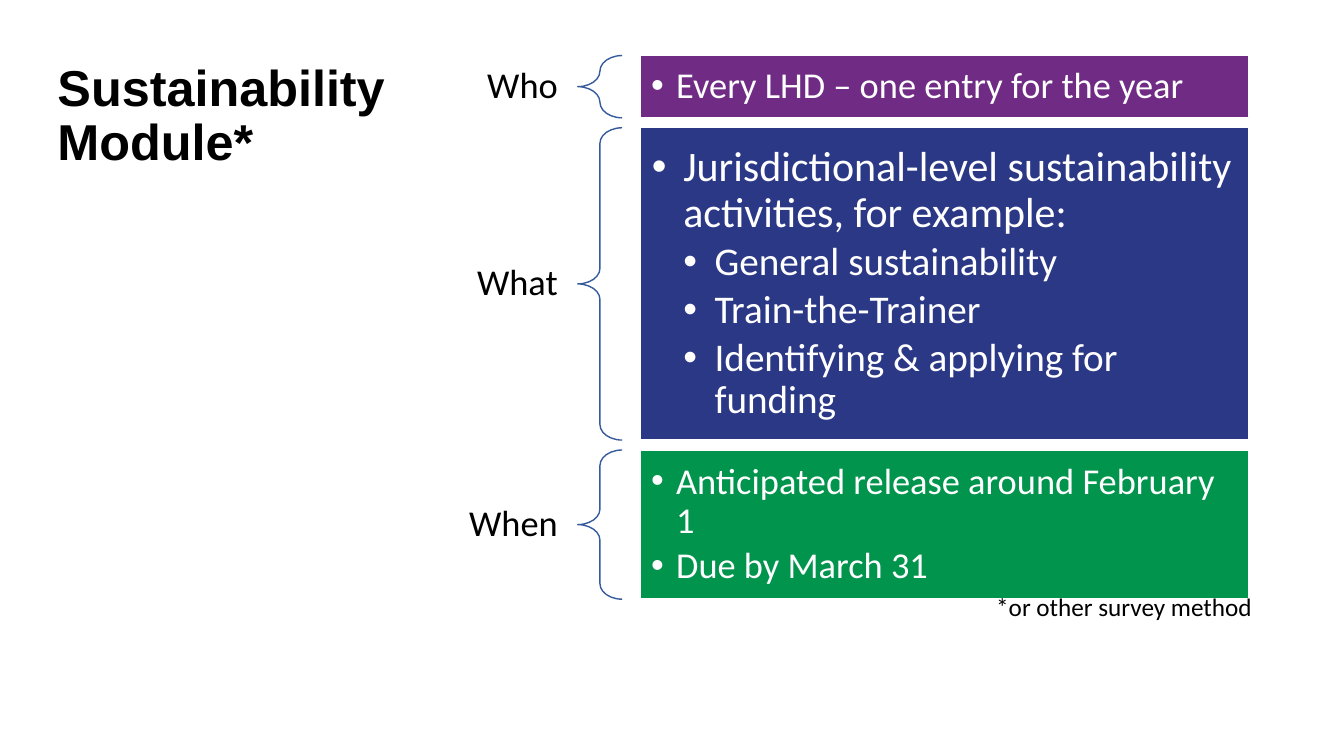
from lxml import etree
from pptx import Presentation
from pptx.dml.color import RGBColor
from pptx.enum import shapes, text
from pptx.oxml import ns
from pptx.util import Cm, Pt

BLACK = RGBColor(0x00, 0x00, 0x00)
WHITE = RGBColor(0xFF, 0xFF, 0xFF)
BRACE = RGBColor(0x36, 0x5B, 0x9D)
PURPLE = RGBColor(0x70, 0x2B, 0x84)
NAVY = RGBColor(0x2B, 0x38, 0x85)
GREEN = RGBColor(0x00, 0x94, 0x4D)

TITLE = "Sustainability Module*"
FOOTNOTE = "*or other survey method"

# label, panel colour, height (cm), inset (cm), bullet indent (cm),
# bullets as (level, size in pt, wording)
ROWS = [
    ("Who", PURPLE, 1.57, 0.28, 0.63, [
        (1, 26, "Every LHD – one entry for the year"),
    ]),
    ("What", NAVY, 7.87, 0.3, 0.79, [
        (1, 30, "Jurisdictional-level sustainability activities, for example:"),
        (2, 28, "General sustainability"),
        (2, 28, "Train-the-Trainer"),
        (2, 28, "Identifying & applying for funding"),
    ]),
    ("When", GREEN, 3.76, 0.28, 0.63, [
        (1, 26, "Anticipated release around February 1"),
        (1, 26, "Due by March 31"),
    ]),
]

TOP, GAP = 1.4, 0.25
LABEL_X, LABEL_W, LABEL_H = 8.92, 5.64, 1.42
BRACE_X, BRACE_W = 14.56, 1.12
PANEL_X, PANEL_W = 16.13, 15.34


def set_frame(tf, anchor, inset_x, inset_y):
    tf.word_wrap = True
    tf.vertical_anchor = anchor
    tf.margin_left = tf.margin_right = Cm(inset_x)
    tf.margin_top = tf.margin_bottom = Cm(inset_y)


def style(p, size, color, align, font="Calibri", bold=False, spacing=0.9):
    p.alignment = align
    p.line_spacing = spacing
    for r in p.runs:
        r.font.name, r.font.size, r.font.bold = font, Pt(size), bold
        r.font.color.rgb = color


def add_bullet(p, level, indent):
    pPr = p._p.get_or_add_pPr()
    pPr.set("marL", str(Cm(level * indent)))
    pPr.set("indent", str(-Cm(indent)))
    etree.SubElement(pPr, ns.qn("a:buFont")).set("typeface", "Arial")
    etree.SubElement(pPr, ns.qn("a:buChar")).set("char", "•")


def add_text(s, box, wording, anchor, insets, size, align, **look):
    tf = s.shapes.add_textbox(*map(Cm, box)).text_frame
    set_frame(tf, anchor, *insets)
    tf.text = wording
    style(tf.paragraphs[0], size, BLACK, align, **look)


def add_brace(s, y, h):
    sp = s.shapes.add_shape(shapes.MSO_SHAPE.LEFT_BRACE,
                            Cm(BRACE_X), Cm(y), Cm(BRACE_W), Cm(h))
    sp.shadow.inherit = False
    sp.adjustments[0], sp.adjustments[1] = 0.35, 0.5
    sp.fill.background()
    sp.line.color.rgb, sp.line.width = BRACE, Pt(1)


def add_panel(s, y, h, color, inset, indent, bullets):
    sp = s.shapes.add_shape(shapes.MSO_SHAPE.RECTANGLE,
                            Cm(PANEL_X), Cm(y), Cm(PANEL_W), Cm(h))
    sp.shadow.inherit = False
    sp.fill.solid()
    sp.fill.fore_color.rgb = color
    sp.line.color.rgb, sp.line.width = WHITE, Pt(1)
    tf = sp.text_frame
    set_frame(tf, text.MSO_ANCHOR.MIDDLE, inset, inset)
    for i, (level, size, wording) in enumerate(bullets):
        p = tf.add_paragraph() if i else tf.paragraphs[0]
        p.text = wording
        p.level = level
        add_bullet(p, level, indent)
        style(p, size, WHITE, text.PP_ALIGN.LEFT)
        p.space_after = Pt(round(size * 0.15))


def main():
    prs = Presentation()
    prs.slide_width, prs.slide_height = Cm(33.87), Cm(19.05)
    s = prs.slides.add_slide(prs.slide_layouts[6])

    y = TOP
    for label, color, h, inset, indent, bullets in ROWS:
        label_y = y + (h - LABEL_H) / 2
        add_text(s, (LABEL_X, label_y, LABEL_W, LABEL_H), label,
                 text.MSO_ANCHOR.MIDDLE, (0.5, 0.18), 26, text.PP_ALIGN.RIGHT)
        add_brace(s, y, h)
        add_panel(s, y, h, color, inset, indent, bullets)
        y += h + GAP

    add_text(s, (1.2, 0, 9.83, 4.45), TITLE, text.MSO_ANCHOR.BOTTOM,
             (0.25, 0.13), 36, text.PP_ALIGN.LEFT, font="Arial", bold=True)
    add_text(s, (23.9, 14.76, 7.9, 1.02), FOOTNOTE, text.MSO_ANCHOR.TOP,
             (0.25, 0.13), 18, text.PP_ALIGN.RIGHT, spacing=1.0)
    prs.save("out.pptx")


if __name__ == "__main__":
    main()
